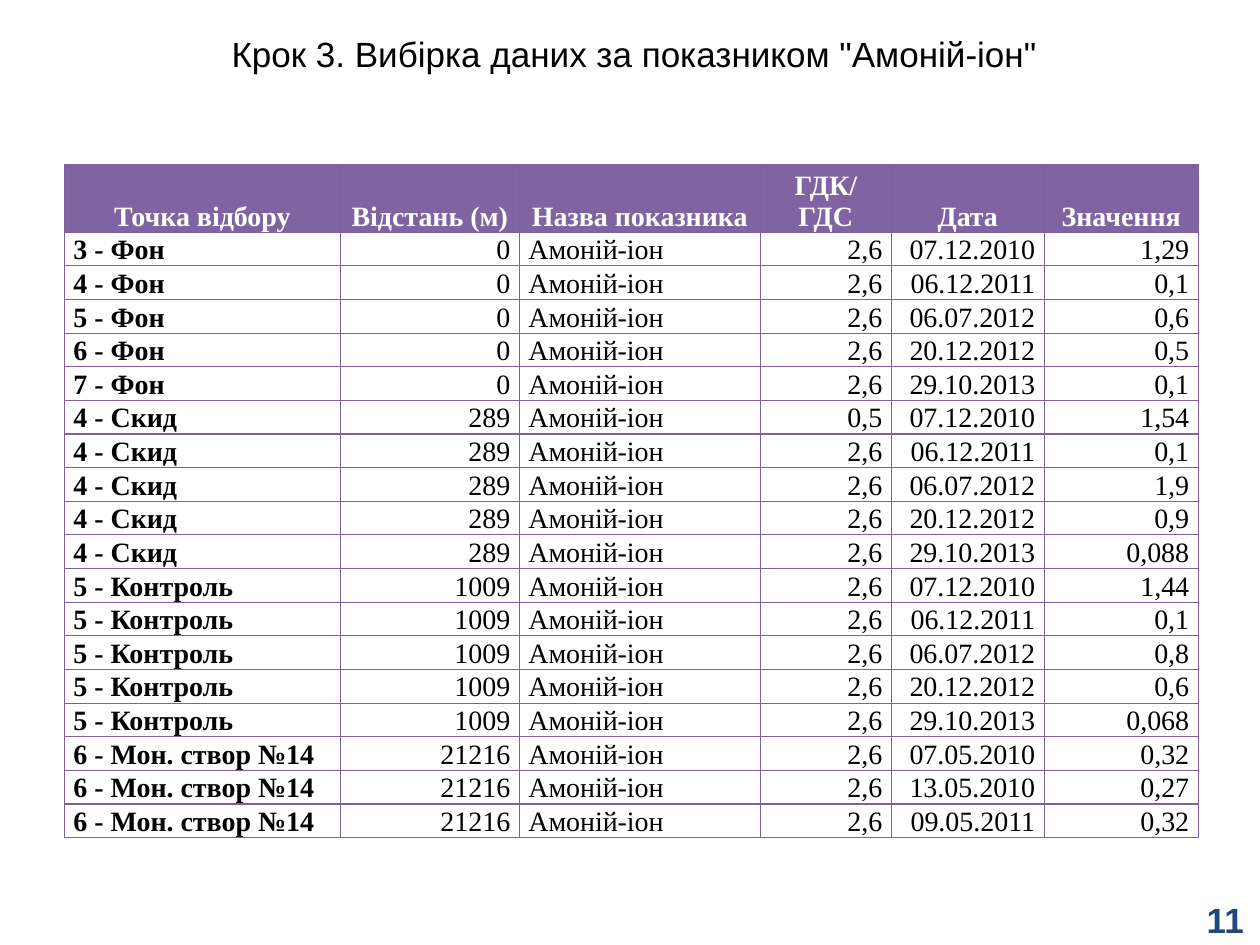
"""Build the slide with the ammonium ion sampling table."""
from dataclasses import dataclass

from lxml import etree
from pptx import Presentation
from pptx import util as u
from pptx.dml.color import RGBColor
from pptx.enum import text
from pptx.oxml import ns

TITLE = 'Крок 3. Вибірка даних за показником "Амоній-іон"'
PAGE_NUMBER = "11"
INDICATOR = "Амоній-іон"
HEADERS = ("Точка відбору", "Відстань (м)", "Назва показника", "ГДК/ГДС", "Дата", "Значення")
SAMPLES = [
    ("3 - Фон", "0", "2,6", "07.12.2010", "1,29"),
    ("4 - Фон", "0", "2,6", "06.12.2011", "0,1"),
    ("5 - Фон", "0", "2,6", "06.07.2012", "0,6"),
    ("6 - Фон", "0", "2,6", "20.12.2012", "0,5"),
    ("7 - Фон", "0", "2,6", "29.10.2013", "0,1"),
    ("4 - Скид", "289", "0,5", "07.12.2010", "1,54"),
    ("4 - Скид", "289", "2,6", "06.12.2011", "0,1"),
    ("4 - Скид", "289", "2,6", "06.07.2012", "1,9"),
    ("4 - Скид", "289", "2,6", "20.12.2012", "0,9"),
    ("4 - Скид", "289", "2,6", "29.10.2013", "0,088"),
    ("5 - Контроль", "1009", "2,6", "07.12.2010", "1,44"),
    ("5 - Контроль", "1009", "2,6", "06.12.2011", "0,1"),
    ("5 - Контроль", "1009", "2,6", "06.07.2012", "0,8"),
    ("5 - Контроль", "1009", "2,6", "20.12.2012", "0,6"),
    ("5 - Контроль", "1009", "2,6", "29.10.2013", "0,068"),
    ("6 - Мон. створ №14", "21216", "2,6", "07.05.2010", "0,32"),
    ("6 - Мон. створ №14", "21216", "2,6", "13.05.2010", "0,27"),
    ("6 - Мон. створ №14", "21216", "2,6", "09.05.2011", "0,32"),
]
COLUMN_WIDTHS = (157.7, 102.3, 137.7, 74.9, 87.4, 88)
HEADER_HEIGHT, ROW_HEIGHT = 38.5, 19.2
TABLE_LEFT, TABLE_TOP = 36.8, 94.2
LEFT, CENTER, RIGHT = text.PP_ALIGN.LEFT, text.PP_ALIGN.CENTER, text.PP_ALIGN.RIGHT
COLUMN_ALIGNMENTS = (LEFT, RIGHT, LEFT, RIGHT, RIGHT, RIGHT)


@dataclass(frozen=True)
class Theme:
    heading_font: str = "Arial"
    table_font: str = "Times New Roman"
    heading_size: float = 20
    table_size: float = 16
    border_width: float = 0.75
    ink: str = "000000"
    paper: str = "FFFFFF"
    header: str = "8064A2"
    border: str = "7D60A0"
    number: str = "1F497D"


THEME = Theme()


def write(frame, words, font, size, color, align, bold=False):
    para = frame.paragraphs[0]
    para.alignment = align
    span = para.add_run()
    span.text = words
    span.font.name = font
    span.font.size = u.Pt(size)
    span.font.bold = bold
    span.font.color.rgb = RGBColor.from_string(color)


def place(box, left, top, width, height):
    box.left, box.top = u.Pt(left), u.Pt(top)
    box.width, box.height = u.Pt(width), u.Pt(height)


def add_borders(cell):
    properties = cell._tc.get_or_add_tcPr()
    for index, side in enumerate(("lnL", "lnR", "lnT", "lnB")):
        line = etree.Element(ns.qn(f"a:{side}"), w=str(u.Pt(THEME.border_width)))
        fill = etree.SubElement(line, ns.qn("a:solidFill"))
        etree.SubElement(fill, ns.qn("a:srgbClr"), val=THEME.border)
        properties.insert(index, line)


def format_cell(cell, words, fill, color, align, bold):
    cell.margin_left = cell.margin_right = u.Pt(5.2)
    cell.margin_top = cell.margin_bottom = 0
    cell.vertical_anchor = text.MSO_ANCHOR.BOTTOM
    cell.fill.solid()
    cell.fill.fore_color.rgb = RGBColor.from_string(fill)
    add_borders(cell)
    write(cell.text_frame, words, THEME.table_font, THEME.table_size, color, align, bold)


def add_samples(page):
    height = HEADER_HEIGHT + ROW_HEIGHT * len(SAMPLES)
    bounds = (TABLE_LEFT, TABLE_TOP, sum(COLUMN_WIDTHS), height)
    table = page.shapes.add_table(
        len(SAMPLES) + 1, len(HEADERS), *map(u.Pt, bounds)).table
    for column, width in zip(table.columns, COLUMN_WIDTHS):
        column.width = u.Pt(width)
    for index, row in enumerate(table.rows):
        row.height = u.Pt(ROW_HEIGHT if index else HEADER_HEIGHT)
    for index, words in enumerate(HEADERS):
        format_cell(table.cell(0, index), words, THEME.header, THEME.paper, CENTER, True)
    for row, (point, distance, *results) in enumerate(SAMPLES, 1):
        for index, words in enumerate((point, distance, INDICATOR, *results)):
            format_cell(table.cell(row, index), words, THEME.paper, THEME.ink,
                        COLUMN_ALIGNMENTS[index], index == 0)


def main():
    deck = Presentation()
    deck.slide_width, deck.slide_height = u.Pt(720), u.Pt(540)
    page = deck.slides.add_slide(deck.slide_layouts[5])

    title = page.shapes.title
    place(title, 19.4, 15.1, 686.2, 31.7)
    title.text_frame.auto_size = text.MSO_AUTO_SIZE.NONE
    title.text_frame.vertical_anchor = text.MSO_ANCHOR.TOP
    write(title.text_frame, TITLE, THEME.heading_font, THEME.heading_size, THEME.ink, CENTER)

    number = page.shapes.add_textbox(*map(u.Pt, (550, 511.2, 167.8, 28.8)))
    number.text_frame.word_wrap = True
    number.text_frame.vertical_anchor = text.MSO_ANCHOR.MIDDLE
    write(number.text_frame, PAGE_NUMBER, THEME.heading_font, THEME.heading_size,
          THEME.number, RIGHT, True)

    add_samples(page)
    deck.save("out.pptx")


if __name__ == "__main__":
    main()
